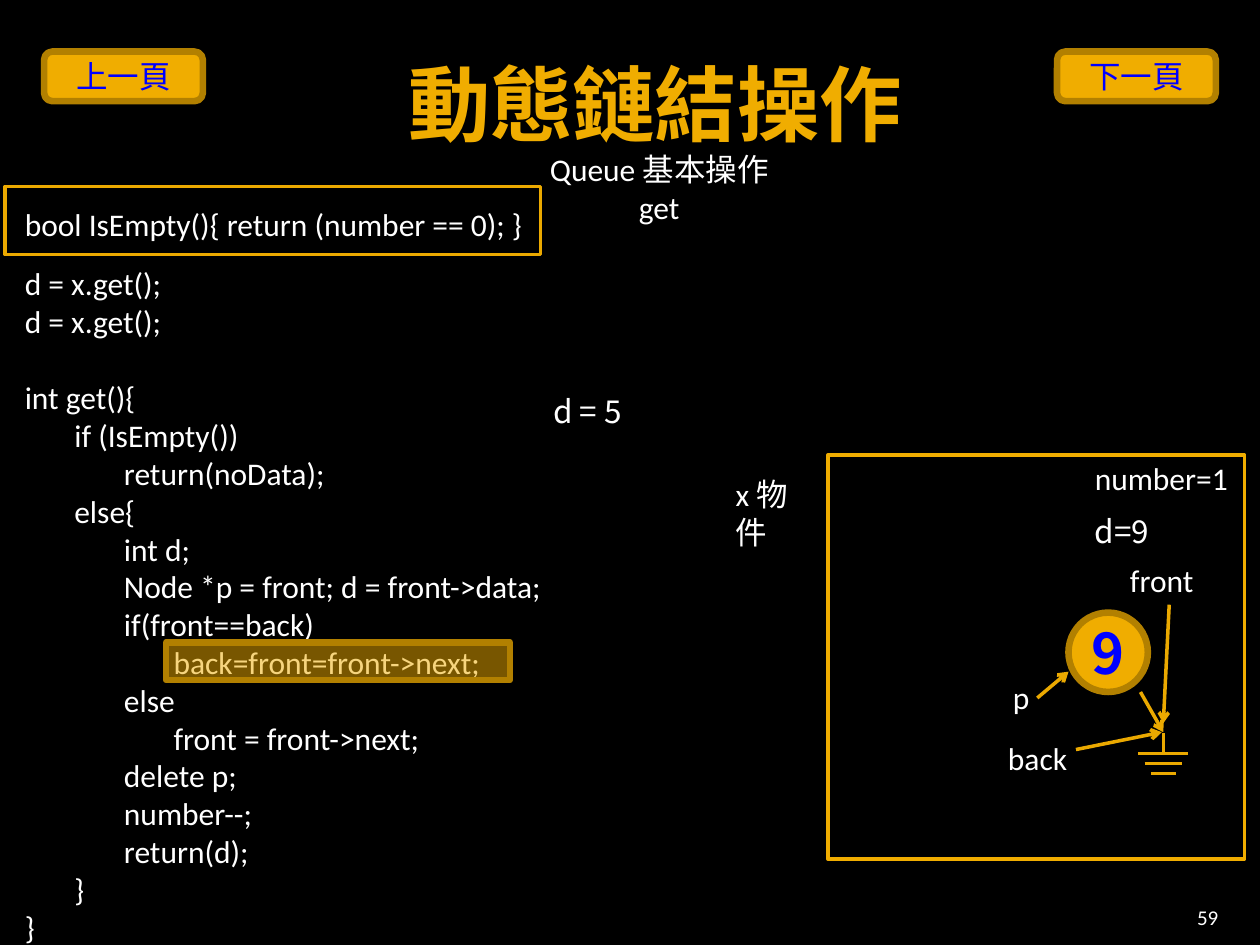
from dataclasses import dataclass

from lxml.etree import SubElement
from pptx import Presentation
from pptx.dml.color import RGBColor
from pptx.enum.shapes import MSO_CONNECTOR, MSO_SHAPE
from pptx.enum.text import MSO_ANCHOR, PP_ALIGN
from pptx.oxml.ns import qn
from pptx.util import Cm, Pt


@dataclass(frozen=True)
class Theme:
    background: str = "000000"
    text: str = "FFFFFF"
    gold: str = "F0AD00"
    line: str = "EBA900"
    border: str = "B28000"
    accent: str = "0000FF"
    latin: str = "Calibri"
    cjk: str = "Noto Sans CJK SC"
    body: int = 18
    title: int = 47
    node: int = 32
    small: int = 12
    thin: float = 2
    thick: float = 3.78


@dataclass(frozen=True)
class Box:
    """A region in centimetres."""
    left: float
    top: float
    width: float
    height: float = 1.02

    def inside(self, left, top, width, height=1.02):
        return Box(self.left + left, self.top + top, width, height)

    def lengths(self):
        return Cm(self.left), Cm(self.top), Cm(self.width), Cm(self.height)


THEME = Theme()
CODE = [
    (0, "d = x.get();"),
    (0, "d = x.get();"),
    (0, "int get(){"),
    (1, "if (IsEmpty())"),
    (2, "return(noData);"),
    (1, "else{"),
    (2, "int d;"),
    (2, "Node *p = front; d = front->data;"),
    (2, "if(front==back)"),
    (3, "back=front=front->next;"),
    (2, "else"),
    (3, "front = front->next;"),
    (2, "delete p;"),
    (2, "number--;"),
    (2, "return(d);"),
    (1, "}"),
    (0, "}"),
]


def write_text(shape, text, size=THEME.body, color=THEME.text, font=THEME.latin,
               bold=False, align=PP_ALIGN.LEFT, anchor=MSO_ANCHOR.TOP,
               insets=(0.25, 0.13, 0, 0), spacing=None):
    """Write one paragraph for each line of text; insets are left, top, right, bottom."""
    frame = shape.text_frame
    frame.word_wrap = True
    frame.vertical_anchor = anchor
    (frame.margin_left, frame.margin_top,
     frame.margin_right, frame.margin_bottom) = map(Cm, insets)
    frame.text = text
    for paragraph in frame.paragraphs:
        paragraph.alignment = align
        paragraph.line_spacing = spacing
        for run in paragraph.runs:
            run.font.size = Pt(size)
            run.font.bold = bold
            run.font.color.rgb = RGBColor.from_string(color)
            run.font.name = font
            SubElement(run.font._element, qn("a:ea"), typeface=THEME.cjk)
    return frame


def add_label(shapes, box, text, **text_format):
    return write_text(shapes.add_textbox(*box.lengths()), text, **text_format)


def add_box(shapes, kind, box, line, width, fill=None, alpha=None):
    shape = shapes.add_shape(kind, *box.lengths())
    shape.shadow.inherit = False
    shape.line.color.rgb = RGBColor.from_string(line)
    shape.line.width = Pt(width)
    if fill is None:
        shape.fill.background()
    else:
        shape.fill.solid()
        shape.fill.fore_color.rgb = RGBColor.from_string(fill)
    if alpha is not None:
        color = shape._element.spPr.find(qn("a:solidFill"))[0]
        SubElement(color, qn("a:alpha"), val=str(alpha * 1000))
    return shape


def add_line(shapes, box, start, end, arrow=False):
    points = [Cm(value) for x, y in (start, end) for value in (box.left + x, box.top + y)]
    connector = shapes.add_connector(MSO_CONNECTOR.STRAIGHT, *points)
    connector.line.color.rgb = RGBColor.from_string(THEME.line)
    connector.line.width = Pt(THEME.thin)
    if arrow:
        SubElement(connector.line._get_or_add_ln(), qn("a:tailEnd"), type="arrow")
    SubElement(connector._element.spPr, qn("a:effectLst"))


def add_button(shapes, box, text):
    button = add_box(shapes, MSO_SHAPE.ROUNDED_RECTANGLE, box,
                     THEME.border, THEME.thick, THEME.gold)
    write_text(button, text, color=THEME.accent, font=THEME.cjk, align=PP_ALIGN.CENTER,
               anchor=MSO_ANCHOR.MIDDLE, insets=(0, 0, 0, 0))


def add_header(shapes, box):
    add_label(shapes, box.inside(1.19, 0, 22.25, 2.54), "動態鏈結操作", size=THEME.title,
              color=THEME.gold, bold=True, align=PP_ALIGN.CENTER,
              anchor=MSO_ANCHOR.BOTTOM, insets=(0.25, 0, 0.25, 0))
    add_label(shapes, box.inside(9.4, 2.37, 6), "Queue 基本操作\vget",
              align=PP_ALIGN.CENTER, insets=(0.25, 0.13, 0.25, 0))
    for left, text in ((0, "上一頁"), (box.width - 3.2, "下一頁")):
        add_button(shapes, box.inside(left, 0.51, 3.2, 1), text)


def add_code(shapes, box):
    insets = (0.4, 0, 0, 0)
    # Helper function in a frame
    helper = add_box(shapes, MSO_SHAPE.RECTANGLE, box.inside(0, 0, 10.8, 1.37),
                     THEME.line, THEME.thin)
    write_text(helper, "bool IsEmpty(){ return (number == 0); }", insets=insets, spacing=1.5)

    # Calls and listing, indented by level
    listing = add_label(shapes, box.inside(0, 1.57, box.width, 13.26),
                        "\n".join(text for _, text in CODE), insets=insets)
    for paragraph, (level, _) in zip(listing.paragraphs, CODE):
        properties = paragraph._p.get_or_add_pPr()
        properties.set("marL", str(Cm(level)))
        properties.set("indent", "0")
    listing.paragraphs[2].space_before = Pt(22)

    # Current statement
    add_box(shapes, MSO_SHAPE.RECTANGLE, box.inside(3.25, 9.19, 6.93, 0.76),
            THEME.border, THEME.thick, THEME.gold, alpha=50)


def add_ground(shapes, box):
    """Ground symbol: a stem above three shrinking bars."""
    group = shapes.add_group_shape().shapes
    middle = box.width / 2
    for index in range(3):
        inset = index * 0.125
        height = 0.41 + index * 0.2
        add_line(group, box, (inset, height), (box.width - inset, height))
    add_line(group, box, (middle, 0), (middle, 0.41))


def add_object(shapes, box):
    add_box(shapes, MSO_SHAPE.RECTANGLE, box, THEME.gold, THEME.thin)

    # Members and pointer names
    for left, top, width, text, font in (
        (5.13, -0.05, 3.2, "number=1", THEME.latin),
        (5.13, 1.02, 1.75, "d=9", THEME.cjk),
        (5.84, 2.01, 1.83, "front", THEME.latin),
        (3.38, 5.59, 1.75, "back", THEME.latin),
        (3.48, 4.37, 0.86, "p", THEME.latin),
    ):
        add_label(shapes, box.inside(left, top, width), text, font=font)

    # Node and the null pointer it leads to
    node = add_box(shapes, MSO_SHAPE.OVAL, box.inside(4.85, 3.18, 1.6, 1.6),
                   THEME.border, THEME.thick, THEME.gold)
    write_text(node, "9", size=THEME.node, color=THEME.accent, font=THEME.cjk, bold=True,
               align=PP_ALIGN.CENTER, anchor=MSO_ANCHOR.MIDDLE, insets=(0, 0, 0, 0))
    add_ground(shapes, box.inside(6.26, 5.61, 1, 0.81))

    # Pointers: front, back, next, p
    for start, end in (
        ((6.88, 3.02), (6.76, 5.41)),
        ((5, 5.94), (6.73, 5.59)),
        ((6.3, 4.78), (6.76, 5.59)),
        ((4.22, 4.9), (4.85, 4.37)),
    ):
        add_line(shapes, box, start, end, arrow=True)


def main():
    presentation = Presentation()
    presentation.slide_width, presentation.slide_height = Cm(25.4), Cm(19.05)
    slide = presentation.slides.add_slide(presentation.slide_layouts[6])
    slide.background.fill.solid()
    slide.background.fill.fore_color.rgb = RGBColor.from_string(THEME.background)
    shapes = slide.shapes

    add_code(shapes, Box(0.1, 3.76, 11, 14.83))
    add_header(shapes, Box(0.89, 0.53, 23.62, 3.39))
    add_object(shapes, Box(16.69, 9.17, 8.4, 8.15))
    add_label(shapes, Box(14.58, 9.45, 1.7), "x 物件")
    add_label(shapes, Box(10.9, 7.77, 2.08), "d = 5", font=THEME.cjk)
    add_label(shapes, Box(22.78, 17.98, 2.03, 0.76), "59", size=THEME.small,
              align=PP_ALIGN.RIGHT, anchor=MSO_ANCHOR.BOTTOM, insets=(0.25, 0.13, 0.25, 0))
    presentation.save("out.pptx")


if __name__ == "__main__":
    main()
